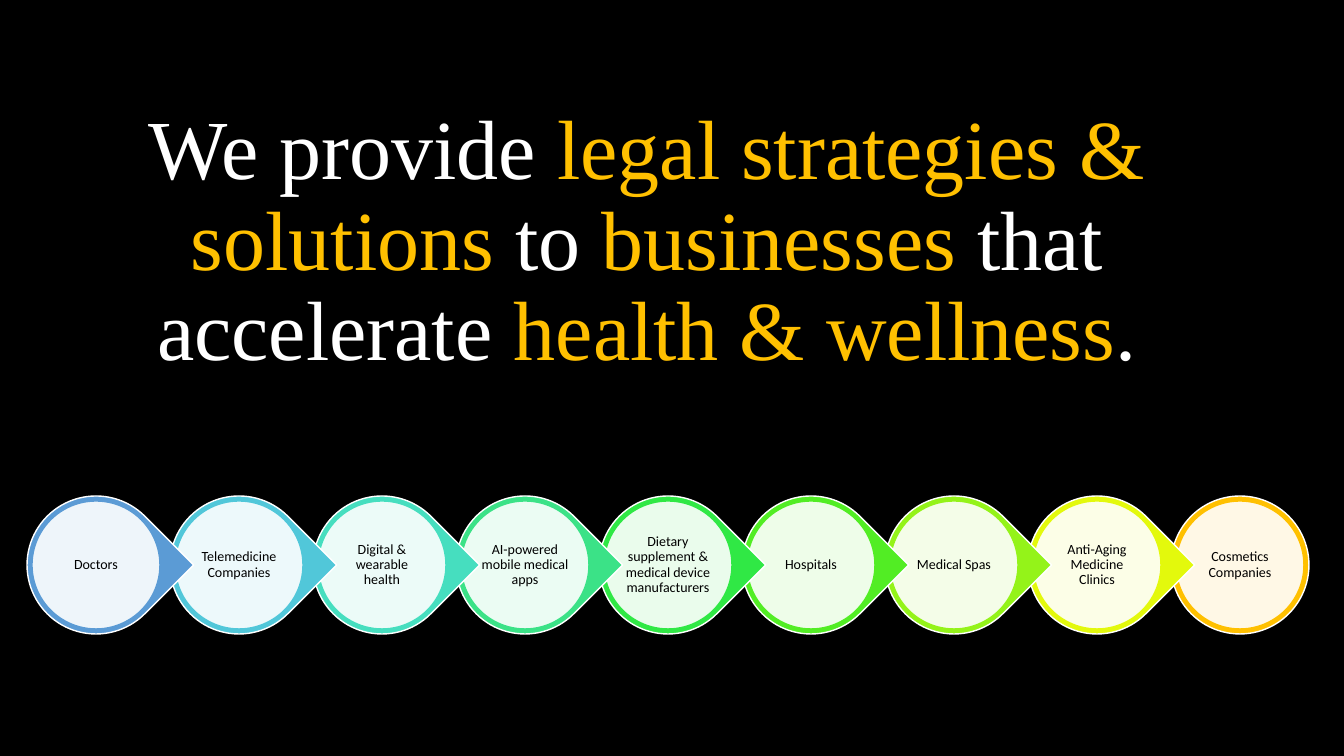
from lxml.etree import SubElement
from pptx import Presentation
from pptx.dml.color import RGBColor
from pptx.enum.shapes import MSO_SHAPE
from pptx.enum.text import MSO_ANCHOR, PP_ALIGN
from pptx.oxml.ns import qn
from pptx.util import Pt

PX = 12192000 / 1344  # EMU per px


def box_at(*lengths):
    return [round(length * PX) for length in lengths]


def color(hex_code):
    return RGBColor.from_string(hex_code)


deck = Presentation()
deck.slide_width, deck.slide_height = box_at(1344, 756)
page = deck.slides.add_slide(deck.slide_layouts[6])
page.background.fill.solid()
page.background.fill.fore_color.rgb = color("000000")

# Headline, with key phrases in gold
WHITE, GOLD = "FFFFFF", "FFC000"
HEADLINE = [
    ("We provide ", WHITE),
    ("legal strategies & solutions", GOLD),
    (" to ", WHITE),
    ("businesses", GOLD),
    (" that accelerate ", WHITE),
    ("health & wellness", GOLD),
    (".", WHITE),
]
headline = page.shapes.add_textbox(*box_at(49, 14, 1196, 415))
frame = headline.text_frame
frame.word_wrap = True
frame.vertical_anchor = MSO_ANCHOR.BOTTOM
frame.margin_bottom = box_at(50)[0]
para = frame.paragraphs[0]
para.alignment = PP_ALIGN.CENTER
para.line_spacing = 0.9
for words, hue in HEADLINE:
    span = para.add_run()
    span.text = words
    span.font.name = "Times New Roman"
    span.font.size = Pt(60)
    span.font.color.rgb = color(hue)

# Client chain: each drop points right, over the next one
CLIENTS = [
    ("Doctors", "5B9BD5"),
    ("Telemedicine Companies", "51C7D9"),
    ("Digital & wearable health", "46DEBF"),
    ("AI-powered mobile medical apps", "3BE287"),
    ("Dietary supplement & medical device manufacturers", "30E845"),
    ("Hospitals", "52ED24"),
    ("Medical Spas", "94F319"),
    ("Anti-Aging Medicine Clinics", "E3F90C"),
    ("Cosmetics Companies", "FFC000"),
]
LEFT, TOP, SIZE, PITCH = 27, 496, 138, 143
RIM, LABEL_INSET = 5, 23
LAST = len(CLIENTS) - 1
chain = page.shapes.add_group_shape()

for index in range(LAST, -1, -1):
    client, hue = CLIENTS[index]
    left = LEFT + index * PITCH

    # Coloured drop (a plain circle at the end) and its pale disc
    outline = MSO_SHAPE.OVAL if index == LAST else MSO_SHAPE.TEAR
    layers = [(outline, 0, hue, WHITE), (MSO_SHAPE.OVAL, RIM, WHITE, hue)]
    for kind, inset, fill, line in layers:
        side = SIZE - 2 * inset
        shape = chain.shapes.add_shape(kind, *box_at(left + inset, TOP + inset, side, side))
        shape.shadow.inherit = False
        shape.fill.solid()
        shape.fill.fore_color.rgb = color(fill)
        shape.line.color.rgb = color(line)
        shape.line.width = Pt(1)
        if kind == MSO_SHAPE.TEAR:
            shape.rotation = 45
    disc_color = shape.fill._xPr.find(qn("a:solidFill"))[0]
    SubElement(disc_color, qn("a:alpha"), val="90000")

    # Label
    side = SIZE - 2 * LABEL_INSET
    label = chain.shapes.add_textbox(*box_at(left + LABEL_INSET, TOP + LABEL_INSET, side, side))
    frame = label.text_frame
    frame.text = client
    frame.word_wrap = True
    frame.vertical_anchor = MSO_ANCHOR.MIDDLE
    frame.margin_left = frame.margin_right = box_at(1)[0]
    frame.margin_top = frame.margin_bottom = box_at(1)[0]
    para = frame.paragraphs[0]
    para.alignment = PP_ALIGN.CENTER
    para.line_spacing = 0.9
    span = para.runs[0]
    span.font.name = "Calibri"
    span.font.size = Pt(10)
    span.font.color.rgb = color("000000")

deck.save("out.pptx")
